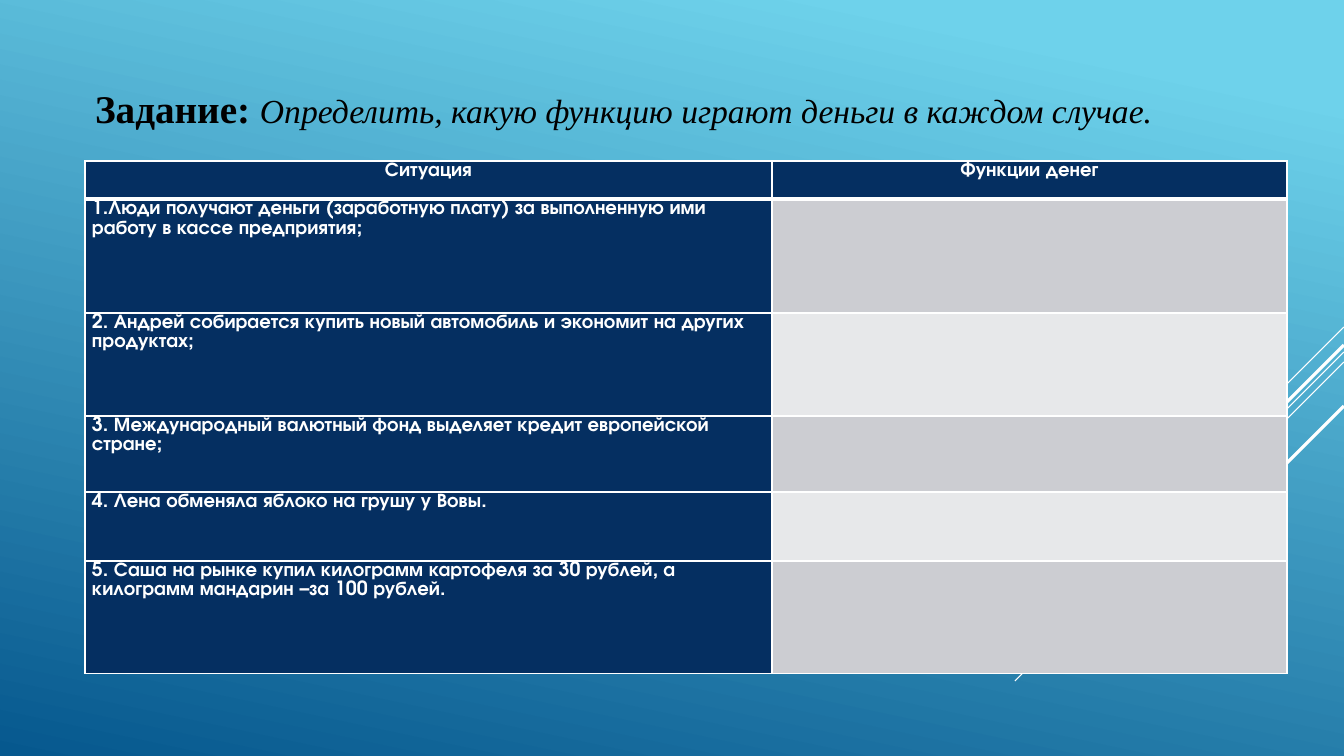
from lxml.etree import SubElement
from pptx import Presentation
from pptx.dml.color import RGBColor
from pptx.enum.shapes import MSO_CONNECTOR
from pptx.enum.text import MSO_ANCHOR, MSO_AUTO_SIZE, PP_ALIGN
from pptx.oxml.ns import qn
from pptx.util import Pt

SCALE = 12192000 / 1344
THEME = {
    "sky": "6ED2EB", "sea": "06588E", "line": "FFFFFF", "ink": "000000",
    "navy": "052F61", "band": ["CCCDD2", "E7E8EA"],
    "title_font": "Times New Roman", "table_font": "TeX Gyre Adventor",
    "title_size": 28, "task_size": 24, "table_size": 14,
}


def px(length):
    return round(length * SCALE)


def add_text(paragraph, text, *, font, size, color, bold=False, italic=False):
    run = paragraph.add_run()
    run.text = text
    run.font.name = font
    run.font.size = Pt(size)
    run.font.bold = bold
    run.font.italic = italic
    run.font.color.rgb = RGBColor.from_string(color)


presentation = Presentation()
presentation.slide_width = px(1344)
presentation.slide_height = px(756)
slide = presentation.slides.add_slide(presentation.slide_layouts[5])

background = slide.background.fill
background.gradient()
background.gradient_angle = 360 - 102
for stop, position, color in zip(background.gradient_stops, (0.1, 1), (THEME["sky"], THEME["sea"])):
    stop.position = position
    stop.color.rgb = RGBColor.from_string(color)

diagonals = [(327, 101, 0.75), (352, 329, 0.75), (362, 209, 0.75), (345, 193, 2.25), (406, 140, 2.25)]
for top, run_length, width in diagonals:
    diagonal = slide.shapes.add_connector(
        MSO_CONNECTOR.STRAIGHT, px(1344), px(top), px(1344 - run_length), px(top + run_length))
    diagonal.line.color.rgb = RGBColor.from_string(THEME["line"])
    diagonal.line.width = Pt(width)
    SubElement(diagonal.element.spPr, qn("a:effectLst"))

title = slide.shapes.title
title.left, title.top, title.width, title.height = px(85), px(79), px(1141), px(57)
title_frame = title.text_frame
title_frame.word_wrap = True
title_frame.auto_size = MSO_AUTO_SIZE.SHAPE_TO_FIT_TEXT
title_frame.vertical_anchor = MSO_ANCHOR.TOP
heading = title_frame.paragraphs[0]
heading.alignment = PP_ALIGN.LEFT
add_text(heading, "Задание: ", font=THEME["title_font"], size=THEME["title_size"],
         color=THEME["ink"], bold=True)
add_text(heading, "Определить, какую функцию играют деньги в каждом случае.",
         font=THEME["title_font"], size=THEME["task_size"], color=THEME["ink"], italic=True)

rows = [
    ("Ситуация", "Функции денег"),
    ("1.Люди получают деньги (заработную плату) за выполненную ими работу в кассе предприятия;", ""),
    ("2. Андрей собирается купить новый автомобиль и экономит на других продуктах;", ""),
    ("3. Международный валютный фонд выделяет кредит европейской стране;", ""),
    ("4. Лена обменяла яблоко на грушу у Вовы.", ""),
    ("5. Саша на рынке купил килограмм картофеля за 30 рублей, а килограмм мандарин –за 100 рублей.", ""),
]
column_widths = [687, 515]
row_heights = [38, 114, 103, 76, 69, 113]
table = slide.shapes.add_table(
    len(rows), len(column_widths), px(85), px(161), px(sum(column_widths)), px(sum(row_heights))).table
table.horz_banding = False
for column, width in zip(table.columns, column_widths):
    column.width = px(width)

for row_index, (texts, height) in enumerate(zip(rows, row_heights)):
    table.rows[row_index].height = px(height)
    border_widths = {"a:lnL": 1, "a:lnR": 1, "a:lnT": 3 if row_index == 1 else 1,
                     "a:lnB": 3 if row_index == 0 else 1}
    for column_index, text in enumerate(texts):
        cell = table.cell(row_index, column_index)
        cell.margin_left = cell.margin_right = px(7)
        cell.margin_top = cell.margin_bottom = 0
        properties = cell._tc.get_or_add_tcPr()
        for side, width in border_widths.items():
            border = SubElement(properties, qn(side), w=str(Pt(width)))
            border_fill = SubElement(border, qn("a:solidFill"))
            SubElement(border_fill, qn("a:srgbClr"), val=THEME["line"])
        is_answer = row_index > 0 and column_index == 1
        color = THEME["band"][(row_index - 1) % 2] if is_answer else THEME["navy"]
        cell.fill.solid()
        cell.fill.fore_color.rgb = RGBColor.from_string(color)
        if text:
            paragraph = cell.text_frame.paragraphs[0]
            paragraph.line_spacing = 1.07
            paragraph.alignment = PP_ALIGN.CENTER if row_index == 0 else PP_ALIGN.LEFT
            add_text(paragraph, text, font=THEME["table_font"], size=THEME["table_size"],
                     color=THEME["line"], bold=True)

presentation.save("out.pptx")
